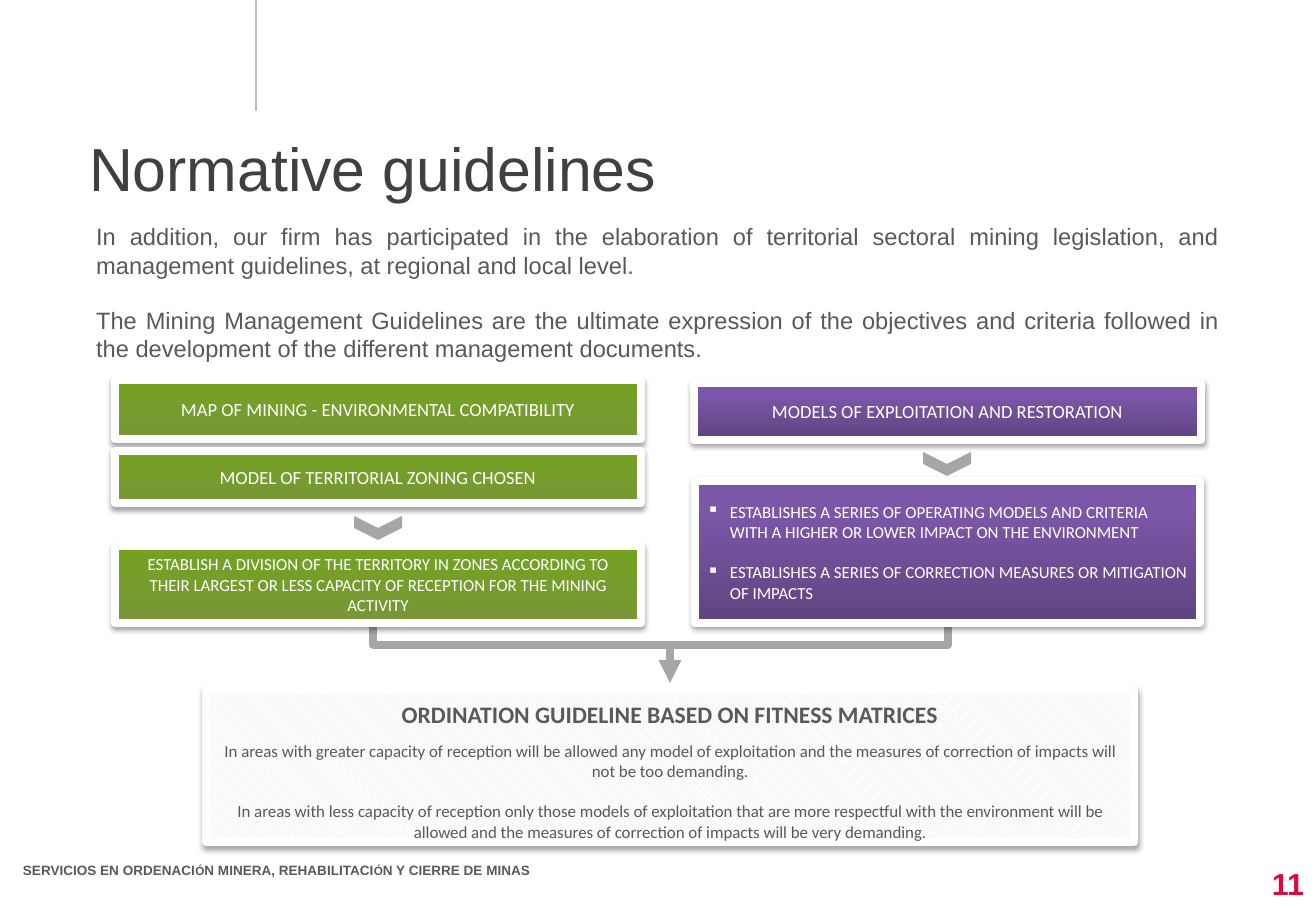
import pptx
import pptx.dml.color
import pptx.enum.dml
import pptx.enum.shapes
import pptx.enum.text
import pptx.oxml
import pptx.oxml.ns
import pptx.util
from lxml import etree

RGB = pptx.dml.color.RGBColor
Pt = pptx.util.Pt
SHAPE = pptx.enum.shapes.MSO_SHAPE
LINK = pptx.enum.shapes.MSO_CONNECTOR
ALIGN = pptx.enum.text.PP_ALIGN
ANCHOR = pptx.enum.text.MSO_ANCHOR
qn = pptx.oxml.ns.qn

WHITE = RGB(0xFF, 0xFF, 0xFF)
INK = RGB(0x40, 0x40, 0x40)
TEXT = RGB(0x59, 0x59, 0x59)
GREY = RGB(0xA6, 0xA6, 0xA6)
RULE = RGB(0xBF, 0xBF, 0xBF)
HATCH = RGB(0xE2, 0xE2, 0xE2)
RED = RGB(0xDD, 0x09, 0x39)
# Bottom colour, top colour, share of the height where the top colour starts
GREEN = (RGB(0x77, 0x97, 0x37), RGB(0x75, 0xA2, 0x21), 1.0)
PURPLE = (RGB(0x5F, 0x44, 0x80), RGB(0x7C, 0x57, 0xA8), 0.8)

SCALE = 914400 / 121.5
DENT = 23


def px(n):
    return pptx.util.Emu(round(n * SCALE))


def place(shape, box):
    shape.left, shape.top, shape.width, shape.height = map(px, box)


def style(par, size, color, face="Calibri", bold=False, align=ALIGN.CENTER,
          before=0):
    par.alignment = align
    par.space_before = Pt(before)
    font = par.font
    font.name, font.bold = face, bold
    font.color.rgb = color
    if size:
        font.size = Pt(size)


def write(frame, texts):
    """Put one paragraph per text into the frame and return them."""
    frame.word_wrap = True
    frame.auto_size = pptx.enum.text.MSO_AUTO_SIZE.NONE
    frame.text = "\n".join(texts)
    return frame.paragraphs


def mark(par, char=None, dent=0):
    """Set the bullet and hanging indent; no char means no bullet."""
    props = par._p.get_or_add_pPr()
    props.set("marL", str(px(dent)))
    props.set("indent", str(-px(dent)))
    if char:
        etree.SubElement(props, qn("a:buChar")).set("char", char)
    else:
        etree.SubElement(props, qn("a:buNone"))


def shade(shape):
    """Add a soft shadow below the shape."""
    shape.shadow.inherit = False
    effects = shape._element.spPr.find(qn("a:effectLst"))
    drop = etree.SubElement(effects, qn("a:outerShdw"), blurRad=str(Pt(3.1)),
                            dist=str(Pt(1.8)), dir="5400000", rotWithShape="0")
    black = etree.SubElement(drop, qn("a:srgbClr"), val="000000")
    etree.SubElement(black, qn("a:alpha"), val="35000")


def panel(slide, box):
    """Add a white-framed box with a shadow."""
    shape = slide.shapes.add_shape(SHAPE.ROUNDED_RECTANGLE, *map(px, box))
    shape.adjustments[0] = 0
    shape.line.color.rgb = WHITE
    shape.line.width = Pt(4.5)
    shade(shape)
    return shape


def card(slide, box, hues, size, texts, char=None):
    shape = panel(slide, box)
    low, high, stop = hues
    shape.fill.gradient()
    shape.fill.gradient_angle = 90
    first, last = shape.fill.gradient_stops
    first.color.rgb, first.position = low, 0
    last.color.rgb, last.position = high, stop
    for i, par in enumerate(write(shape.text_frame, texts)):
        if char:
            mark(par, char, DENT)
        style(par, size, WHITE, align=ALIGN.LEFT if char else ALIGN.CENTER,
              before=12 if i else 0)


def guide(slide, box, head, texts):
    """Add the hatched result box with a bold heading."""
    shape = panel(slide, box)
    shape.fill.patterned()
    shape.fill.pattern = pptx.enum.dml.MSO_PATTERN.LIGHT_DOWNWARD_DIAGONAL
    shape.fill.fore_color.rgb = HATCH
    shape.fill.back_color.rgb = WHITE
    frame = shape.text_frame
    frame.vertical_anchor = ANCHOR.TOP
    frame.margin_top, frame.margin_bottom = px(11), 0
    title, *rest = write(frame, [head, *texts])
    style(title, 14, TEXT, bold=True)
    for par, gap in zip(rest, (7, 12)):
        style(par, 10, TEXT, before=gap)


def chevron(slide, x, y):
    """Add a down-pointing chevron centred on x, y."""
    wide, high = 24, 48
    shape = slide.shapes.add_shape(SHAPE.CHEVRON, px(x - wide // 2),
                                   px(y - high // 2), px(wide), px(high))
    shape.rotation = 90
    shape.fill.solid()
    shape.fill.fore_color.rgb = GREY
    shape.line.fill.background()
    shape.shadow.inherit = False


def stroke(slide, x, top, end, color, width, arrow=False):
    """Add a vertical line, with an arrowhead at its end if asked."""
    line = slide.shapes.add_connector(LINK.STRAIGHT, px(x), px(top), px(x), px(end))
    line.line.color.rgb = color
    line.line.width = Pt(width)
    if arrow:
        etree.SubElement(line.line._get_or_add_ln(), qn("a:tailEnd"), type="triangle")
    etree.SubElement(line._element.spPr, qn("a:effectLst"))


def bracket(slide, left, right, top, low):
    """Add the open bracket that gathers both columns."""
    pen = slide.shapes.build_freeform(left, top, scale=SCALE)
    pen.add_line_segments([(left, low), (right, low), (right, top)], close=False)
    shape = pen.convert_to_shape()
    shape.fill.background()
    shape.line.color.rgb = GREY
    shape.line.width = Pt(4.5)
    shape.shadow.inherit = False


def label(slide, box):
    shape = slide.shapes.add_textbox(*map(px, box))
    shape.text_frame.word_wrap = True
    return shape.text_frame


def footer(slide):
    par = label(slide, (11, 858, 772, 33)).paragraphs[0]
    par.line_spacing = 0.9
    style(par, None, TEXT, "Arial", True, ALIGN.LEFT)
    parts = ("SERVICIOS EN ORDENACI", "Ó", "N MINERA, REHABILITACI", "Ó",
             "N Y CIERRE DE MINAS")
    for part in parts:
        run = par.add_run()
        run.text = part
        run.font.size = Pt(7 if part == "Ó" else 8)


def heading(slide, text):
    title = slide.shapes.title
    place(title, (89, 120, 1148, 94))
    frame = title.text_frame
    frame.vertical_anchor = ANCHOR.MIDDLE
    frame.margin_left = frame.margin_right = 0
    frame.margin_top = frame.margin_bottom = 0
    style(write(frame, [text])[0], 36, INK, "Arial", align=ALIGN.LEFT)


def intro(slide, texts):
    body = slide.placeholders[1]
    place(body, (84, 216, 1148, 156))
    for i, par in enumerate(write(body.text_frame, texts)):
        mark(par)
        style(par, 14, TEXT, "Arial", align=ALIGN.JUSTIFY, before=16 if i else 0)


def main():
    deck = pptx.Presentation()
    deck.slide_width, deck.slide_height = px(1316), px(911)
    slide = deck.slides.add_slide(deck.slide_layouts[1])

    footer(slide)
    stroke(slide, 256, 0, 111, RULE, 1.5)
    heading(slide, "Normative guidelines")
    intro(slide, [
        "In addition, our firm has participated in the elaboration of territorial sectoral mining legislation, and management guidelines, at regional and local level.",
        "The Mining Management Guidelines are the ultimate expression of the objectives and criteria followed in the development of the different management documents."])

    bracket(slide, 373, 948, 609, 645)
    stroke(slide, 670, 645, 683, GREY, 4.5, arrow=True)

    for top, high, size, text in (
            (380, 59, 11, "MAP OF MINING - ENVIRONMENTAL COMPATIBILITY"),
            (451, 52, 11, "MODEL OF TERRITORIAL ZONING CHOSEN"),
            (546, 77, 10, "ESTABLISH A DIVISION OF THE TERRITORY IN ZONES ACCORDING TO THEIR LARGEST OR LESS CAPACITY OF RECEPTION FOR THE MINING ACTIVITY")):
        card(slide, (115, top, 526, high), GREEN, size, [text])
    chevron(slide, 378, 528)

    card(slide, (694, 383, 507, 57), PURPLE, 11,
         ["MODELS OF EXPLOITATION AND RESTORATION"])
    card(slide, (695, 481, 505, 142), PURPLE, 10, [
        "ESTABLISHES A SERIES OF OPERATING MODELS AND CRITERIA WITH A HIGHER OR LOWER IMPACT ON THE ENVIRONMENT",
        "ESTABLISHES A SERIES OF CORRECTION MEASURES OR MITIGATION OF IMPACTS"], "▪")
    chevron(slide, 947, 464)

    guide(slide, (206, 689, 928, 153), "ORDINATION GUIDELINE BASED ON FITNESS MATRICES", [
        "In areas with greater capacity of reception will be allowed any model of exploitation and the measures of correction of impacts will not be too demanding.",
        "In areas with less capacity of reception only those models of exploitation that are more respectful with the environment will be allowed and the measures of correction of impacts will be very demanding."])

    page = label(slide, (1213, 860, 103, 47))
    page.vertical_anchor = ANCHOR.MIDDLE
    style(write(page, ["11"])[0], 18, RED, "Arial", True, ALIGN.RIGHT)
    deck.save("out.pptx")


if __name__ == "__main__":
    main()
